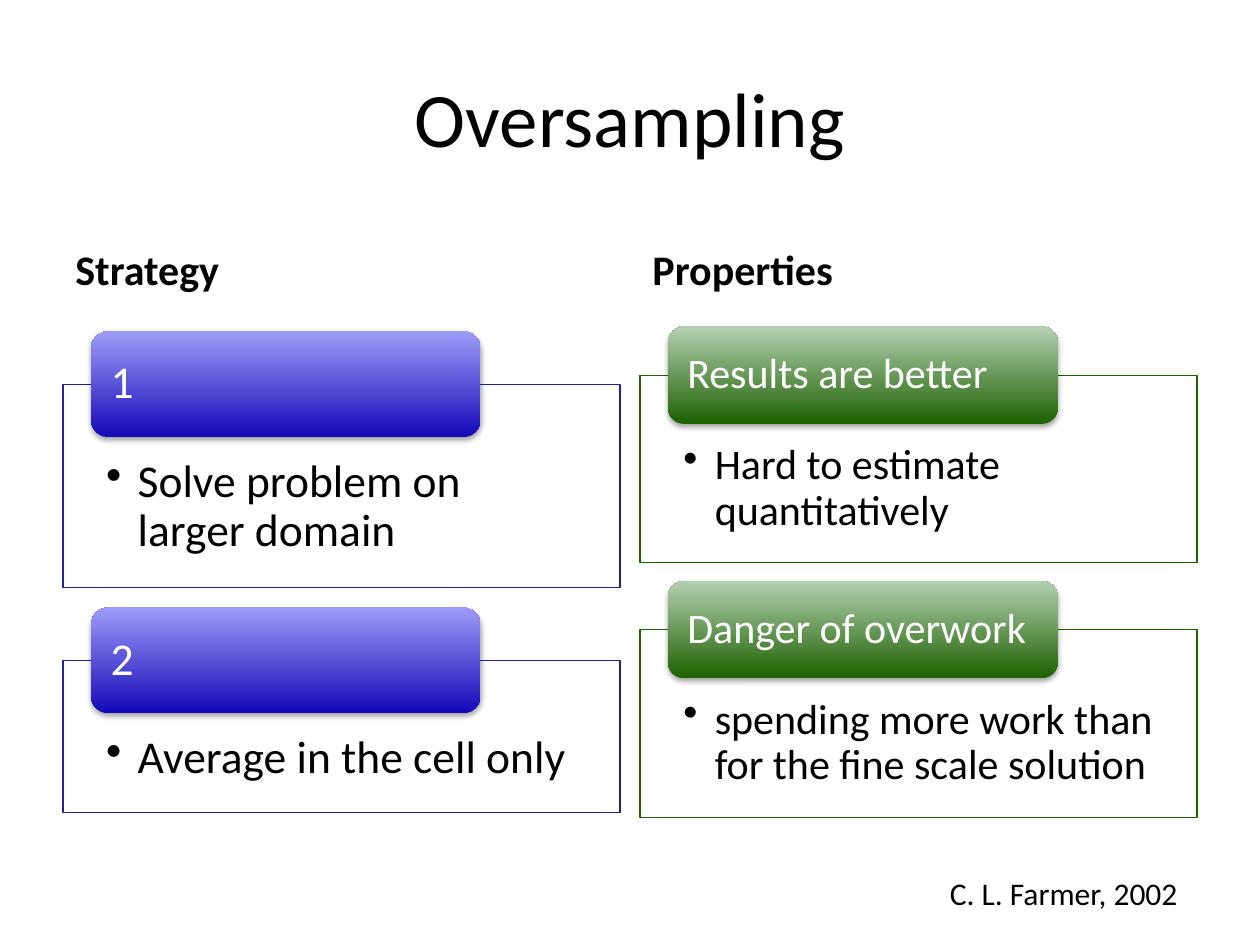
from lxml import etree
from pptx import Presentation
from pptx.dml.color import RGBColor
from pptx.enum.shapes import MSO_SHAPE
from pptx.enum.text import MSO_ANCHOR, MSO_AUTO_SIZE, PP_ALIGN
from pptx.oxml.ns import qn
from pptx.util import Pt

RECTANGLE, ROUNDED = MSO_SHAPE.RECTANGLE, MSO_SHAPE.ROUNDED_RECTANGLE
TOP, MIDDLE, BOTTOM = MSO_ANCHOR.TOP, MSO_ANCHOR.MIDDLE, MSO_ANCHOR.BOTTOM
LEFT, CENTER = PP_ALIGN.LEFT, PP_ALIGN.CENTER
FIT_SHAPE = MSO_AUTO_SIZE.SHAPE_TO_FIT_TEXT

FONT = "Calibri"
COLORS = {
    "text": "000000", "white": "FFFFFF", "shadow": "000000",
    "blue_line": "251CA3", "blue_dark": "1308B7", "blue_light": "9E9CF8",
    "green_line": "1D6100", "green_dark": "1D6100", "green_light": "B4D0B2",
}
COLUMN_WIDTH = 318.24
BULLET_INDENT = 18

# Each item: tab label, panel text, panel top, panel height
COLUMNS = [
    {"heading": "Strategy", "left": 36, "hue": "blue", "size": 26, "tab_height": 60.5,
     "items": [("1", "Solve problem on larger domain", 219.6, 116),
               ("2", "Average in the cell only", 377.4, 87)]},
    {"heading": "Properties", "left": 365.76, "hue": "green", "size": 24, "tab_height": 55.7,
     "items": [("Results are better", "Hard to estimate quantitatively", 214.4, 107.2),
               ("Danger of overwork", "spending more work than for the fine scale solution",
                359.8, 107.2)]},
]


def rgb(name):
    return RGBColor.from_string(COLORS[name])


def add_xml(parent, tag, **attributes):
    values = {key: str(value) for key, value in attributes.items()}
    return etree.SubElement(parent, qn(tag), values)


def write_text(box, text, size, color="text", bold=False, align=LEFT, anchor=TOP,
               insets=(7.2, 3.6, 7.2, 3.6), line_spacing=None, bullet=False, wrap=True):
    """Fill a box with one paragraph; insets run left, top, right, bottom."""
    frame = box.text_frame
    frame.word_wrap = wrap
    frame.vertical_anchor = anchor
    (frame.margin_left, frame.margin_top,
     frame.margin_right, frame.margin_bottom) = [Pt(inset) for inset in insets]
    para = frame.paragraphs[0]
    para.alignment = align
    if line_spacing:
        para.line_spacing = line_spacing
    if bullet:
        properties = para._p.get_or_add_pPr()
        properties.set("marL", str(Pt(BULLET_INDENT)))
        properties.set("indent", str(-Pt(BULLET_INDENT)))
        add_xml(properties, "a:buChar", char="•")
    span = para.add_run()
    span.text = text
    span.font.name = FONT
    span.font.size = Pt(size)
    span.font.bold = bold
    span.font.color.rgb = rgb(color)


class SlideBuilder:
    def __init__(self, page):
        self.page = page

    def text(self, left, top, width, height, text, size, **style):
        box = self.page.shapes.add_textbox(Pt(left), Pt(top), Pt(width), Pt(height))
        write_text(box, text, size, **style)
        return box

    def shape(self, kind, left, top, width, height):
        box = self.page.shapes.add_shape(kind, Pt(left), Pt(top), Pt(width), Pt(height))
        box.shadow.inherit = False
        return box

    def panel(self, left, top, height, text, size, hue, tab_height):
        box = self.shape(RECTANGLE, left, top, COLUMN_WIDTH, height)
        box.fill.solid()
        box.fill.fore_color.rgb = rgb("white")
        fill_color = box._element.spPr.find(qn("a:solidFill")).find(qn("a:srgbClr"))
        add_xml(fill_color, "a:alpha", val=90000)
        box.line.color.rgb = rgb(hue + "_line")
        box.line.width = Pt(0.75)
        write_text(box, text, size, insets=(24.7, 0.7 * tab_height, 24.7, 14),
                   line_spacing=0.9, bullet=True)

    def tab(self, left, panel_top, height, text, size, hue):
        """Label centred on the top edge of its panel."""
        box = self.shape(ROUNDED, left + 0.05 * COLUMN_WIDTH, panel_top - height / 2,
                         0.7 * COLUMN_WIDTH, height)
        box.fill.gradient()
        box.fill.gradient_angle = 90
        for stop, shade, position in zip(box.fill.gradient_stops, ("dark", "light"), (0, 1)):
            stop.color.rgb = rgb(f"{hue}_{shade}")
            stop.position = position
        box.line.fill.background()
        effects = box._element.spPr.find(qn("a:effectLst"))
        shadow = add_xml(effects, "a:outerShdw", blurRad=Pt(3.1), dist=Pt(1.8),
                         dir=5400000, rotWithShape=0)
        shadow_color = add_xml(shadow, "a:srgbClr", val=COLORS["shadow"])
        add_xml(shadow_color, "a:alpha", val=35000)
        write_text(box, text, size, color="white", anchor=MIDDLE,
                   insets=(8.4, 0, 8.4, 0), line_spacing=0.9)

    def column(self, heading, left, hue, size, tab_height, items):
        self.text(left, 120.9, COLUMN_WIDTH, 50.4, heading, 24, bold=True, anchor=BOTTOM)
        for label, body, top, height in items:
            self.panel(left, top, height, body, size, hue, tab_height)
            self.tab(left, top, tab_height, label, size, hue)


def main():
    deck = Presentation()
    deck.slide_width, deck.slide_height = Pt(720), Pt(540)
    builder = SlideBuilder(deck.slides.add_slide(deck.slide_layouts[6]))
    builder.text(36, 21.6, 648, 90, "Oversampling", 44, align=CENTER, anchor=MIDDLE)
    for column in COLUMNS:
        builder.column(**column)
    credit = builder.text(535.7, 496, 148.3, 29, "C. L. Farmer, 2002", 18, wrap=False)
    credit.text_frame.auto_size = FIT_SHAPE
    deck.save("out.pptx")


if __name__ == "__main__":
    main()
